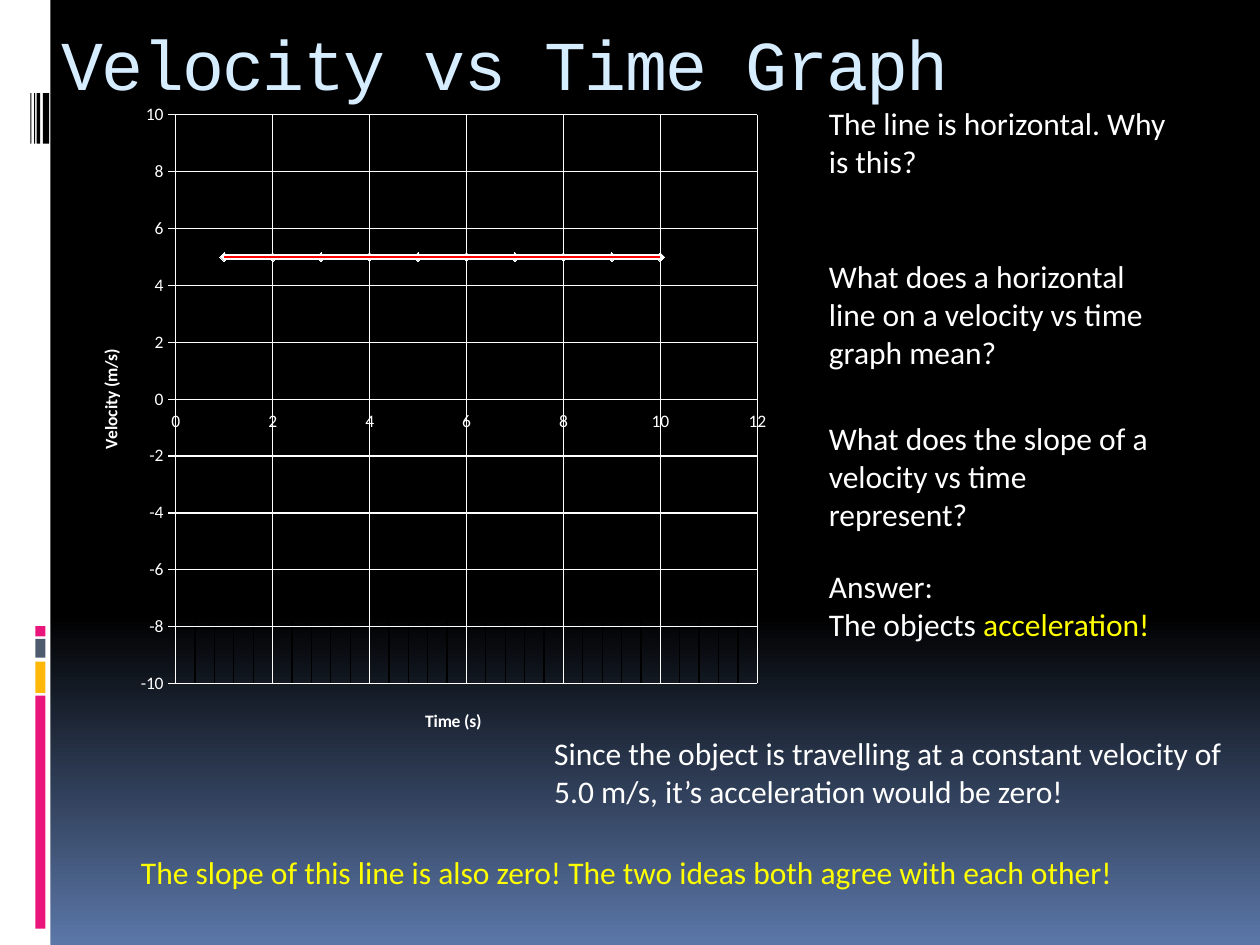
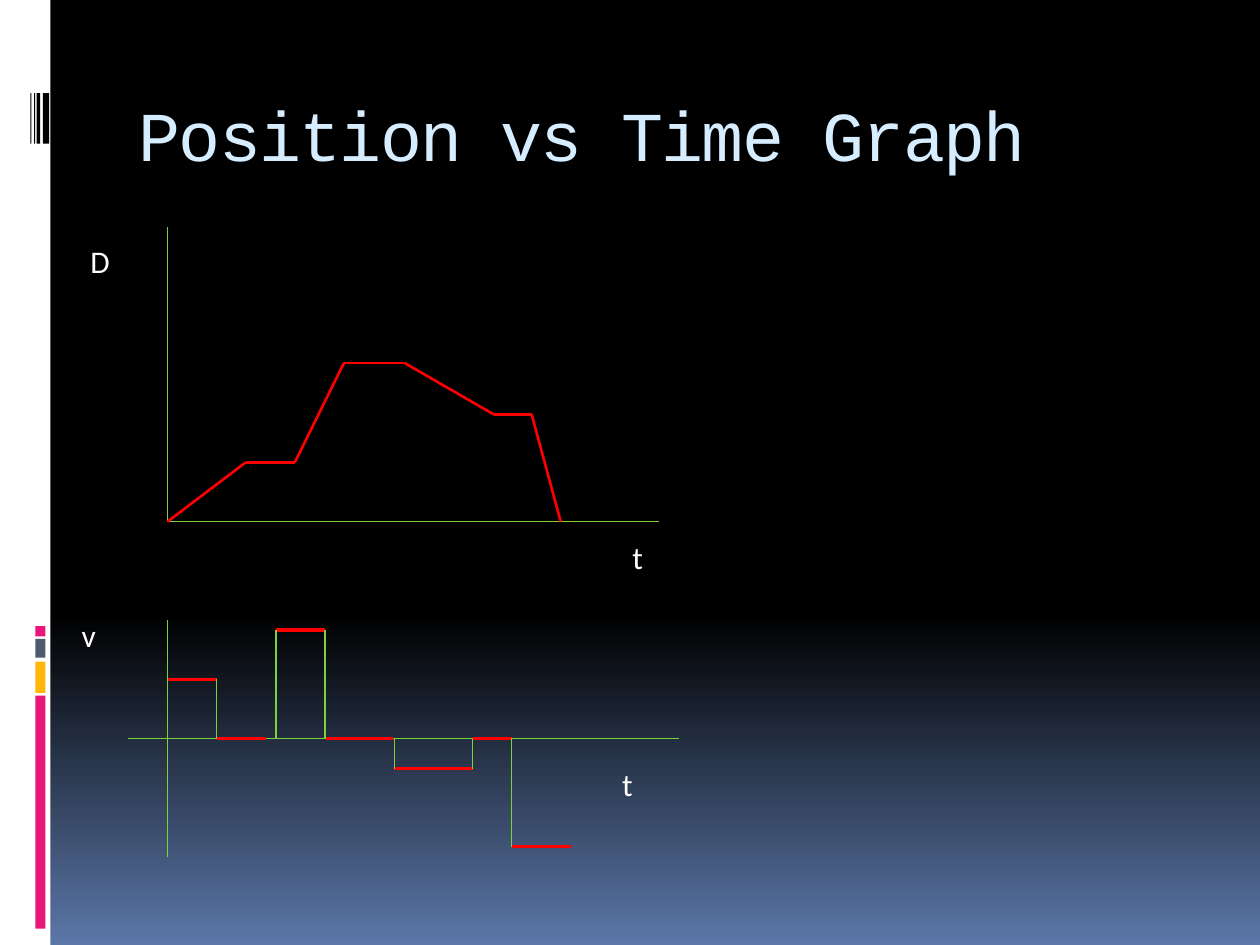
from itertools import pairwise
from lxml.etree import SubElement
from pptx import Presentation
from pptx.chart.data import XyChartData
from pptx.dml.color import RGBColor
from pptx.enum.chart import XL_CHART_TYPE, XL_MARKER_STYLE, XL_TICK_MARK
from pptx.enum.shapes import MSO_CONNECTOR, MSO_SHAPE
from pptx.enum.text import MSO_ANCHOR, MSO_AUTO_SIZE, PP_ALIGN
from pptx.oxml import parse_xml
from pptx.oxml.ns import nsdecls, qn
from pptx.util import Inches, Pt

COLOURS = {
    "black": "000000", "white": "FFFFFF", "dusk": "5B77A8", "title": "D6ECFF",
    "pink": "EA157A", "amber": "FEB80A", "slate": "4E5B6F",
    "axis": "7FD13B", "curve": "FF0000", "accent": "FFFF00", "marker": "8FD0FF",
}
BODY_FONT = "Calibri"
TITLE_FONT = "Courier New"
SIDE_BANDS = [
    (0, 0, 0.4, 7.5, "white"),
    (0.28, 5.52, 0.08, 1.85, "pink"),
    (0.28, 5.25, 0.08, 0.25, "amber"),
    (0.28, 5.07, 0.08, 0.15, "slate"),
    (0.28, 4.97, 0.08, 0.08, "pink"),
    (0.34, 0.74, 0.05, 0.4, "black"),
    (0.29, 0.74, 0.03, 0.4, "black"),
    (0.27, 0.74, 0.01, 0.4, "black"),
    (0.24, 0.74, 0.01, 0.4, "black"),
]


def colour(name):
    return RGBColor.from_string(COLOURS[name])


def inches(*lengths):
    return [Inches(length) for length in lengths]


def set_background(master):
    fill = master.background.fill
    fill.gradient()
    fill.gradient_angle = 270
    for stop, position, name in zip(fill.gradient_stops, (0.65, 1), ("black", "dusk")):
        stop.position = position
        stop.color.rgb = colour(name)


def add_side_bands(page):
    for left, top, width, height, name in SIDE_BANDS:
        band = page.shapes.add_shape(MSO_SHAPE.RECTANGLE, *inches(left, top, width, height))
        band.shadow.inherit = False
        band.fill.solid()
        band.fill.fore_color.rgb = colour(name)
        band.line.fill.background()


def add_page(deck, heading, left, top):
    page = deck.slides.add_slide(deck.slide_layouts[5])
    add_side_bands(page)
    title = page.shapes.title
    title.left, title.top, title.width, title.height = inches(left, top, 8.5, 1)
    frame = title.text_frame
    frame.text = heading
    frame.vertical_anchor = MSO_ANCHOR.MIDDLE
    para = frame.paragraphs[0]
    para.alignment = PP_ALIGN.LEFT
    para.font.name = TITLE_FONT
    para.font.size = Pt(40)
    para.font.color.rgb = colour("title")
    para.runs[0].font._element.set("spc", "-100")
    return page


def add_text(page, box, lines, name="white", gap=0):
    shape = page.shapes.add_textbox(*inches(*box))
    frame = shape.text_frame
    frame.word_wrap = True
    frame.auto_size = MSO_AUTO_SIZE.SHAPE_TO_FIT_TEXT
    frame.text = "\n".join(lines)
    for para in frame.paragraphs:
        para.font.name = BODY_FONT
        para.font.size = Pt(18)
        para.font.color.rgb = colour(name)
    frame.paragraphs[-1].space_before = Pt(gap)
    return frame


def add_line(page, start, end, name, weight):
    line = page.shapes.add_connector(MSO_CONNECTOR.STRAIGHT, *inches(*start, *end))
    line.line.color.rgb = colour(name)
    line.line.width = Pt(weight)
    SubElement(line._element.spPr, qn("a:effectLst"))


def style_axis(axis, heading):
    axis.has_title = True
    axis.axis_title.text_frame.text = heading
    font = axis.axis_title.text_frame.paragraphs[0].font
    font.name, font.size, font.bold = BODY_FONT, Pt(10), True
    font.color.rgb = colour("white")
    axis.major_tick_mark = XL_TICK_MARK.OUTSIDE
    axis.major_unit = 2
    axis.has_major_gridlines = True
    for line in (axis.format.line, axis.major_gridlines.format.line):
        line.color.rgb = colour("white")
        line.width = Pt(0.75)


def line_properties(name, weight):
    return (f'<c:spPr {nsdecls("c", "a")}><a:ln w="{Pt(weight)}"><a:solidFill>'
            f'<a:srgbClr val="{COLOURS[name]}"/></a:solidFill></a:ln></c:spPr>')


def add_minor_gridlines(axis, unit):
    axis.minor_unit = unit
    axis.has_minor_gridlines = True
    gridlines = axis._element.find(qn("c:minorGridlines"))
    gridlines.append(parse_xml(line_properties("black", 0.75)))


def add_trend_line(series):
    trend = parse_xml(
        f'<c:trendline {nsdecls("c")}>{line_properties("curve", 1.5)}'
        '<c:trendlineType val="linear"/><c:dispRSqr val="0"/><c:dispEq val="0"/></c:trendline>')
    series._element.find(qn("c:xVal")).addprevious(trend)


def place_plot(chart, left, top, width, height):
    plot_area = chart._chartSpace.chart.plotArea
    for layout in plot_area.findall(qn("c:layout")):
        plot_area.remove(layout)
    plot_area.insert(0, parse_xml(
        f'<c:layout {nsdecls("c")}><c:manualLayout><c:layoutTarget val="inner"/>'
        f'<c:xMode val="edge"/><c:yMode val="edge"/><c:x val="{left}"/><c:y val="{top}"/>'
        f'<c:w val="{width}"/><c:h val="{height}"/></c:manualLayout></c:layout>'))


def add_velocity_chart(page, box):
    chart_data = XyChartData()
    points = chart_data.add_series("Series 1")
    for second in range(1, 11):
        points.add_data_point(second, 5)
    chart = page.shapes.add_chart(XL_CHART_TYPE.XY_SCATTER_LINES, *inches(*box), chart_data).chart
    chart.has_legend = False
    chart.has_title = False
    chart.font.name = BODY_FONT
    chart.font.size = Pt(10)
    chart.font.color.rgb = colour("white")
    time_axis, velocity_axis = chart.category_axis, chart.value_axis
    style_axis(time_axis, "Time (s)")
    time_axis.minimum_scale, time_axis.maximum_scale = 0, 12
    add_minor_gridlines(time_axis, 0.4)
    style_axis(velocity_axis, "Velocity (m/s)")
    velocity_axis.minimum_scale, velocity_axis.maximum_scale = -10, 10
    series = chart.plots[0].series[0]
    series.smooth = False
    series.format.line.color.rgb = colour("white")
    series.format.line.width = Pt(3)
    series.marker.style = XL_MARKER_STYLE.DIAMOND
    series.marker.size = 5
    series.marker.format.fill.solid()
    series.marker.format.fill.fore_color.rgb = colour("marker")
    series.marker.format.line.color.rgb = colour("marker")
    add_trend_line(series)
    place_plot(chart, 0.15, 0.04, 0.82, 0.85)


def add_questions(page, left, top, width):
    add_text(page, (left, top, width, 2.22),
             ["The line is horizontal. Why is this?",
              "What does a horizontal line on a velocity vs time graph mean?"], gap=44)
    add_text(page, (left, top + 2.5, width, 1.01),
             ["What does the slope of a velocity vs time represent?"])
    answer = add_text(page, (left, top + 3.67, width, 0.71), ["Answer:", "The objects "])
    span = answer.paragraphs[-1].add_run()
    span.text = "acceleration!"
    span.font.color.rgb = colour("accent")


def add_axes(page, origin, across, up, labels):
    x, y = origin
    add_line(page, (x, y - up[1]), (x, y - up[0]), "axis", 0.94)
    add_line(page, (x + across[0], y), (x + across[1], y), "axis", 0.94)
    for label, right, down in labels:
        add_text(page, (x + right, y + down, 0.63, 0.4), [label])


def add_position_graph(page, origin):
    add_axes(page, origin, (0, 3.9), (0, 2.34), [("D", -0.71, -2.27), ("t", 3.59, 0.08)])
    corners = [(0, 0), (0.62, 0.47), (1.01, 0.47), (1.4, 1.26),
               (1.88, 1.26), (2.59, 0.85), (2.89, 0.85), (3.12, 0)]
    x, y = origin
    places = [(x + time, y - distance) for time, distance in corners]
    for start, end in pairwise(places):
        add_line(page, start, end, "curve", 1.5)


def add_velocity_graph(page, origin):
    add_axes(page, origin, (-0.31, 4.06), (-0.94, 0.94), [("v", -0.78, -1.02), ("t", 3.51, 0.16)])
    x, y = origin
    steps = [(0, 0.39, 0.47), (0.39, 0.78, 0), (0.86, 1.25, 0.86), (1.26, 1.79, 0),
             (1.8, 2.42, -0.24), (2.42, 2.73, 0), (2.73, 3.2, -0.86)]
    for start, end, velocity in steps:
        add_line(page, (x + start, y - velocity), (x + end, y - velocity), "curve", 1.75)
    drops = [(0.39, 0.47), (0.86, 0.86), (1.25, 0.86), (1.8, -0.24), (2.42, -0.24), (2.73, -0.86)]
    for time, velocity in drops:
        add_line(page, (x + time, y - velocity), (x + time, y), "axis", 0.94)


def build_velocity_page(deck):
    page = add_page(deck, "Velocity vs Time Graph", 0.39, 0)
    add_velocity_chart(page, (0.55, 0.7, 5.63, 5.31))
    add_questions(page, 6.48, 0.78, 2.89)
    add_text(page, (4.3, 5.78, 5.55, 0.71),
             ["Since the object is travelling at a constant velocity of 5.0 m/s, "
              "it’s acceleration would be zero!"])
    add_text(page, (1.02, 6.72, 8.52, 0.4),
             ["The slope of this line is also zero! The two ideas both agree with each other!"],
             "accent")


def build_position_page(deck):
    page = add_page(deck, "Position vs Time Graph", 1, 0.56)
    add_position_graph(page, (1.33, 4.14))
    add_velocity_graph(page, (1.33, 5.86))


def main():
    deck = Presentation()
    deck.slide_width, deck.slide_height = inches(10, 7.5)
    set_background(deck.slide_master)
    build_velocity_page(deck)
    build_position_page(deck)
    deck.save("out.pptx")


if __name__ == "__main__":
    main()
